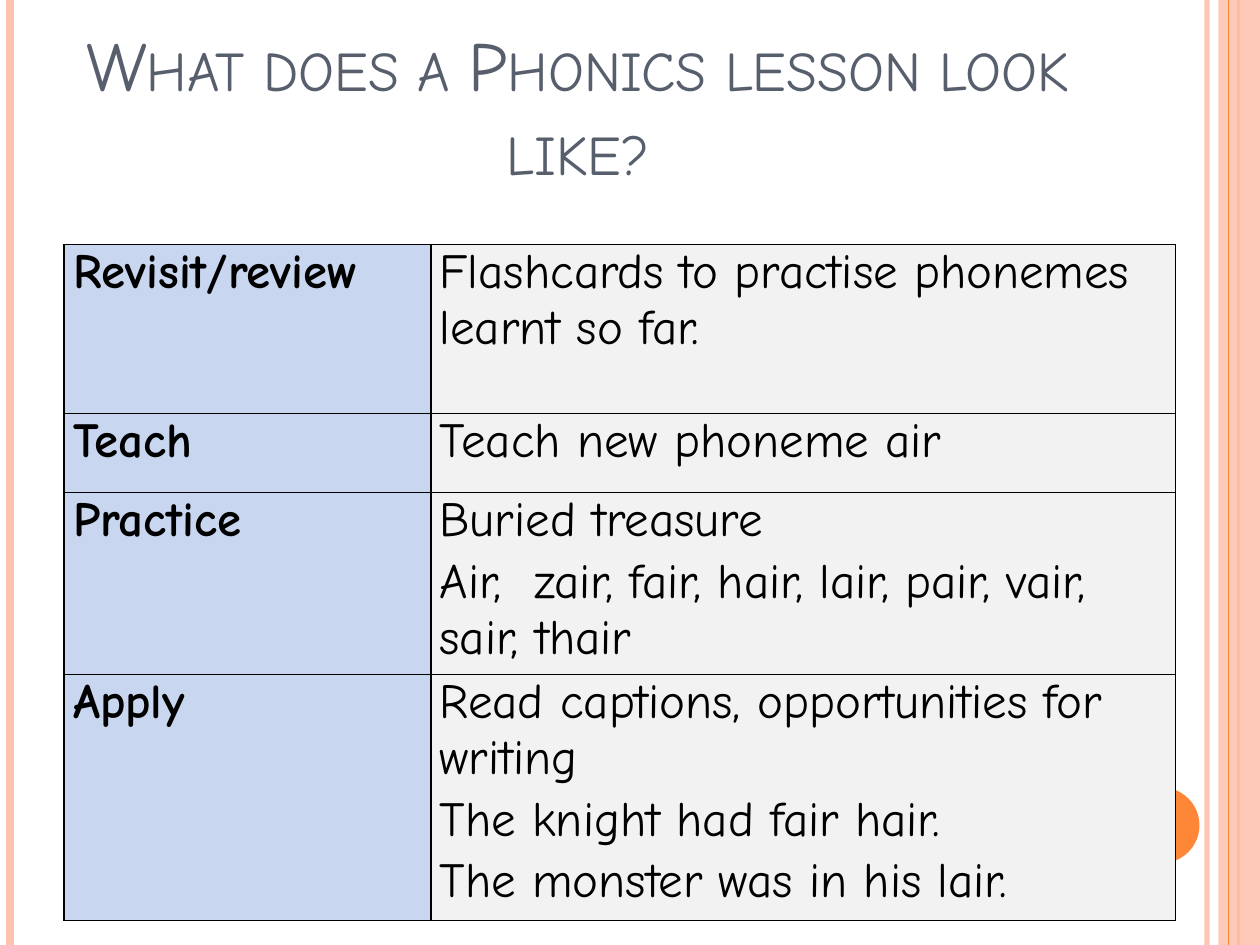
from lxml.etree import SubElement
from pptx import Presentation
from pptx.dml.color import RGBColor
from pptx.enum.shapes import MSO_CONNECTOR, MSO_SHAPE
from pptx.enum.text import MSO_ANCHOR, PP_ALIGN
from pptx.oxml.ns import qn
from pptx.util import Inches, Pt

COLOURS = {
    "peach": "FEC3AE",
    "orange": "FE8637",
    "slate": "575F6D",
    "black": "000000",
    "stage": "C8D6F0",
    "activity": "F2F2F2",
}
FONT = "Comic Neue"

LESSON = [
    (1.34, "Revisit/review", ["Flashcards to practise phonemes learnt so far."]),
    (0.63, "Teach", ["Teach new phoneme air"]),
    (1.38, "Practice", ["Buried treasure",
                        "Air,  zair, fair, hair, lair, pair, vair, sair, thair"]),
    (1.87, "Apply", ["Read captions, opportunities for writing",
                     "The knight had fair hair.",
                     "The monster was in his lair."]),
]


def colour(name):
    return RGBColor.from_string(COLOURS[name])


def set_alpha(fill_parent, percent):
    tint = fill_parent.find(f".//{qn('a:solidFill')}/{qn('a:srgbClr')}")
    SubElement(tint, qn("a:alpha"), val=str(percent * 1000))


def style_font(font, colour_name, **format_values):
    font.color.rgb = colour(colour_name)
    for name, value in {"name": FONT, **format_values}.items():
        setattr(font, name, value)


def add_stripe(page, x, height, colour_name, width, alpha=None):
    stripe = page.shapes.add_connector(
        MSO_CONNECTOR.STRAIGHT, Inches(x), 0, Inches(x), Inches(height))
    stripe.line.color.rgb = colour(colour_name)
    stripe.line.width = Pt(width)
    properties = stripe._element.spPr
    if alpha:
        set_alpha(properties, alpha)
    SubElement(properties, qn("a:effectLst"))


def add_solid(page, kind, box, colour_name):
    solid = page.shapes.add_shape(kind, *map(Inches, box))
    solid.shadow.inherit = False
    solid.fill.solid()
    solid.fill.fore_color.rgb = colour(colour_name)
    solid.line.fill.background()
    return solid


def add_decoration(page, box):
    left, top, width, height = box
    right = left + width
    add_stripe(page, right - 0.42, height, "peach", 3, alpha=93)
    add_stripe(page, left + 0.08, height, "peach", 4.5)
    add_stripe(page, right - 0.17, height, "orange", 1.5)
    band = add_solid(page, MSO_SHAPE.RECTANGLE, (right - 0.33, top, 0.33, height), "peach")
    set_alpha(band._element.spPr, 87)
    add_stripe(page, right - 0.25, height, "orange", 0.75)
    add_solid(page, MSO_SHAPE.OVAL, (right - 1.08, top + 6.25, 0.6, 0.6), "orange")


def add_title(page, box, text):
    frame = page.shapes.add_textbox(*map(Inches, box)).text_frame
    frame.word_wrap = True
    frame.vertical_anchor = MSO_ANCHOR.BOTTOM
    para = frame.paragraphs[0]
    para.alignment = PP_ALIGN.CENTER
    span = para.add_run()
    span.text = text
    style_font(span.font, "slate", size=Pt(40))
    span.font._element.set("cap", "small")


def add_borders(cell):
    """Draw a thin black line on all four sides, placed before the cell fill."""
    properties = cell._tc.get_or_add_tcPr()
    for index, side in enumerate(("lnL", "lnR", "lnT", "lnB")):
        border = SubElement(properties, qn(f"a:{side}"), w=str(Pt(1)))
        fill = SubElement(border, qn("a:solidFill"))
        SubElement(fill, qn("a:srgbClr"), val=COLOURS["black"])
        properties.insert(index, border)


def fill_cell(cell, lines, colour_name, bold):
    cell.fill.solid()
    cell.fill.fore_color.rgb = colour(colour_name)
    add_borders(cell)
    margins = {"margin_left": 0.07, "margin_right": 0.07, "margin_top": 0, "margin_bottom": 0}
    for name, value in margins.items():
        setattr(cell, name, Inches(value))
    frame = cell.text_frame
    for index, line in enumerate(lines):
        para = frame.add_paragraph() if index else frame.paragraphs[0]
        if index:
            para.space_before = Pt(3)
        span = para.add_run()
        span.text = line
        style_font(span.font, "black", size=Pt(28), bold=bold)


def add_lesson_table(page, box):
    table = page.shapes.add_table(len(LESSON), 2, *map(Inches, box)).table
    stage_width = 2.91
    table.columns[0].width = Inches(stage_width)
    table.columns[1].width = Inches(box[2] - stage_width)
    for index, (height, stage, activities) in enumerate(LESSON):
        table.rows[index].height = Inches(height)
        fill_cell(table.cell(index, 0), [stage], "stage", True)
        fill_cell(table.cell(index, 1), activities, "activity", False)


def main():
    deck = Presentation()
    deck.slide_width, deck.slide_height = Inches(10), Inches(7.5)
    page = deck.slides.add_slide(deck.slide_layouts[6])
    add_decoration(page, (0, 0, 10, 7.5))
    add_title(page, (0.5, 0.3, 8.17, 1.25), "What does a Phonics lesson look like?")
    add_lesson_table(page, (0.51, 1.94, 8.82, 5.22))
    deck.save("out.pptx")


if __name__ == "__main__":
    main()
